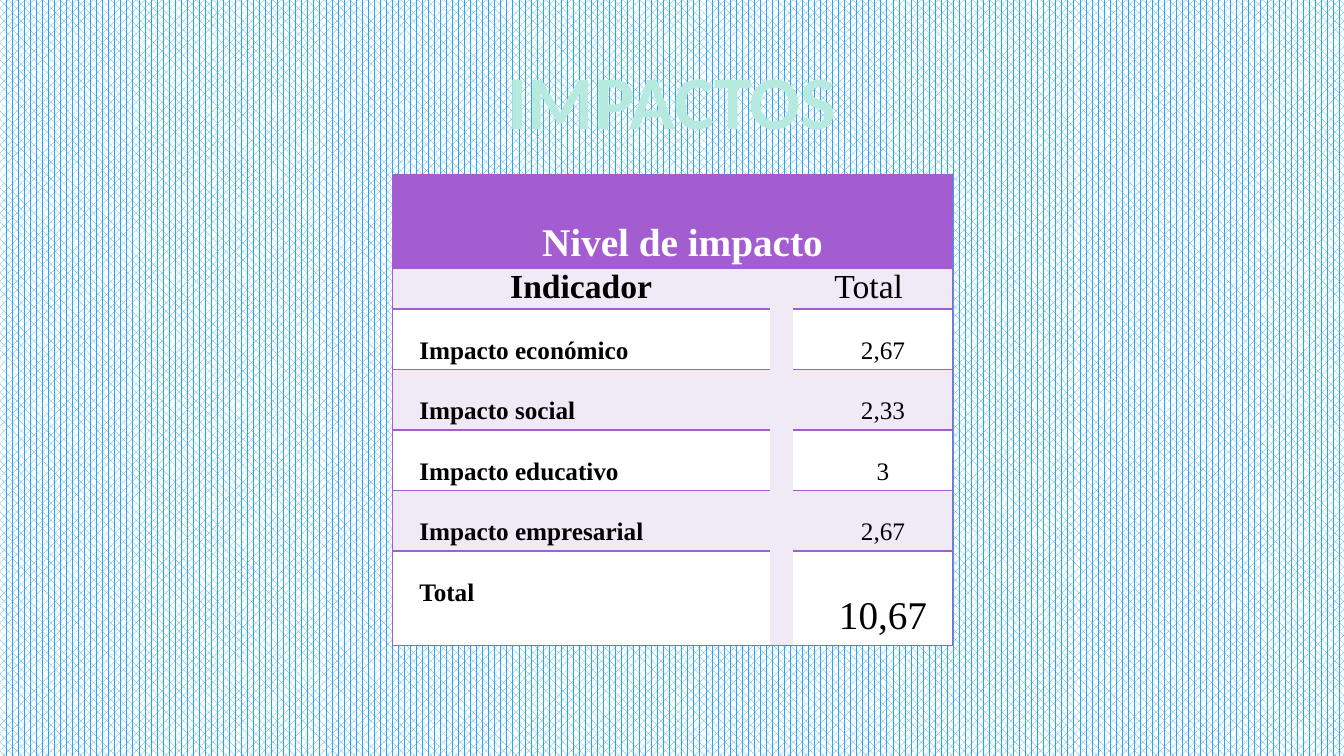
from lxml import etree
from pptx import Presentation
from pptx import util as u
from pptx.dml.color import RGBColor
from pptx.enum import dml, text
from pptx.oxml.ns import qn

Pt = u.Pt
ALIGN = text.PP_ALIGN
COLORS = {"sky": "2FA3EE", "white": "FFFFFF", "black": "000000", "purple": "A35DD1",
          "lilac": "F0EAF7", "mint": "B7EADE", "green": "4BCAAD"}
TITLE = "IMPACTOS"
HEADING = "Nivel de impacto"
ROWS = [
    ("Indicador", "Total "),
    ("Impacto económico ", "2,67"),
    ("Impacto social", "2,33"),
    ("Impacto educativo", "3"),
    ("Impacto empresarial", "2,67"),
    ("Total ", "10,67"),
]
COL_WIDTHS = [270, 16.56, 113.76]
ROW_HEIGHTS = [48.24, 25.2, 32.4, 32.4, 32.4, 32.4, 48.24]
LEFT, TOP = 280.08, 124.56


def rgb(name):
    return RGBColor.from_string(COLORS[name])


def add_line(parent, tag, color, width):
    ln = etree.SubElement(parent, qn(tag), w=str(Pt(width)))
    if color:
        fill = etree.SubElement(ln, qn("a:solidFill"))
        etree.SubElement(fill, qn("a:srgbClr"), val=COLORS[color])
    else:
        etree.SubElement(ln, qn("a:noFill"))
    return ln


def write(tf, words, size, color="black", font="Times New Roman", bold=False,
          align=ALIGN.CENTER, indent=0, spacing=None):
    p = tf.paragraphs[0]
    p.alignment = align
    if spacing:
        p.line_spacing = spacing
    if indent:
        p._p.get_or_add_pPr().set("indent", str(Pt(indent)))
    r = p.add_run()
    r.text = words
    r.font.size, r.font.name, r.font.bold = Pt(size), font, bold
    r.font.color.rgb = rgb(color)
    return r


def style_cell(cell, fill, sides):
    tc_pr = cell._tc.get_or_add_tcPr()
    for side in "LRTB":
        add_line(tc_pr, f"a:ln{side}", "purple" if side in sides else None, 1)
    cell.fill.solid()
    cell.fill.fore_color.rgb = rgb(fill)
    cell.margin_left = cell.margin_right = Pt(5)
    cell.margin_top = cell.margin_bottom = 0


def add_title(s):
    tf = s.shapes.add_textbox(Pt(335.52), Pt(35.28), Pt(289.44), Pt(72.72)).text_frame
    tf.word_wrap = False
    tf.auto_size = text.MSO_AUTO_SIZE.SHAPE_TO_FIT_TEXT
    r = write(tf, TITLE, 54, "mint", "Calibri", bold=True)
    r_pr = r._r.get_or_add_rPr()
    r_pr.insert(0, add_line(r_pr, "a:ln", "green", 1.75))


def add_impact_table(s):
    table = s.shapes.add_table(len(ROW_HEIGHTS), len(COL_WIDTHS), Pt(LEFT), Pt(TOP),
                               Pt(sum(COL_WIDTHS)), Pt(sum(ROW_HEIGHTS))).table
    for col, width in zip(table.columns, COL_WIDTHS):
        col.width = Pt(width)
    for row, height in zip(table.rows, ROW_HEIGHTS):
        row.height = Pt(height)

    head, gap = table.cell(0, 0), table.cell(1, 1)
    head.merge(table.cell(0, 2))
    gap.merge(table.cell(len(ROWS), 1))
    style_cell(head, "purple", "LRTB")
    head.vertical_anchor = text.MSO_ANCHOR.MIDDLE
    body = {"indent": 14.4, "spacing": 2.0}
    write(head.text_frame, HEADING, 28, "white", bold=True, **body)
    style_cell(gap, "lilac", "TB")

    for i, (label, value) in enumerate(ROWS, 1):
        fill = "lilac" if i % 2 else "white"
        name, total = table.cell(i, 0), table.cell(i, 2)
        style_cell(name, fill, "LTB")
        style_cell(total, fill, "RTB")
        if i == 1:
            write(name.text_frame, label, 24, bold=True)
            write(total.text_frame, value, 24)
        else:
            write(name.text_frame, label, 18, bold=True, align=ALIGN.JUSTIFY, **body)
            write(total.text_frame, value, 28 if i == len(ROWS) else 18, **body)


def main():
    """Build the impact summary slide."""
    prs = Presentation()
    prs.slide_width, prs.slide_height = Pt(960), Pt(540)
    s = prs.slides.add_slide(prs.slide_layouts[6])
    bg = s.background.fill
    bg.patterned()
    bg.pattern = dml.MSO_PATTERN.PERCENT_60
    bg.fore_color.rgb, bg.back_color.rgb = rgb("sky"), rgb("white")
    add_title(s)
    add_impact_table(s)
    prs.save("out.pptx")


if __name__ == "__main__":
    main()
